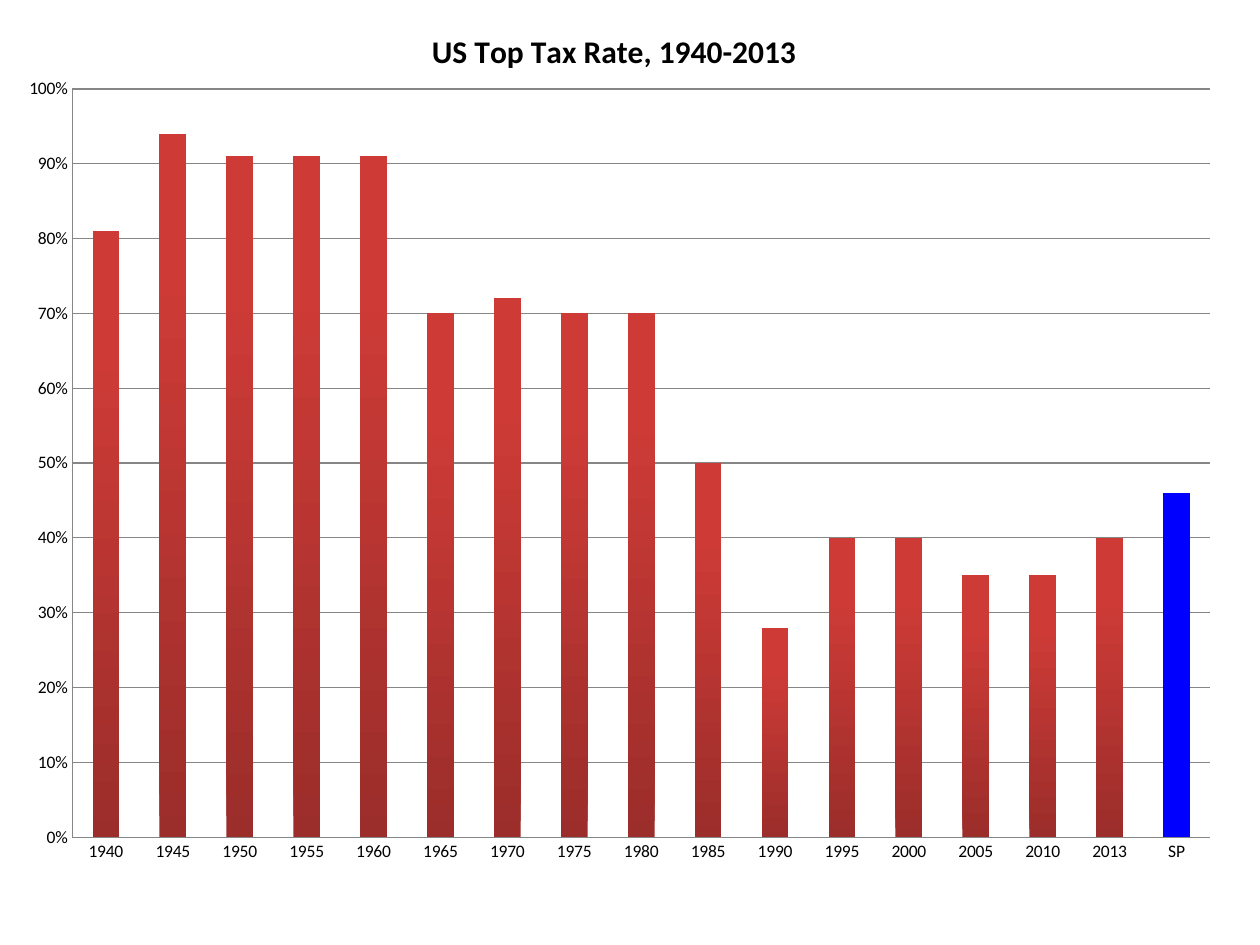
from lxml.etree import SubElement
from pptx import Presentation
from pptx.chart.data import CategoryChartData
from pptx.dml.color import RGBColor
from pptx.enum.chart import XL_CHART_TYPE, XL_TICK_MARK
from pptx.oxml.ns import qn
from pptx.util import Inches, Pt

COLORS = {
    "text": "000000",
    "line": "868686",
    "bar_base": "9B2D2A",
    "bar_top": "CE3B37",
    "highlight": "0000FF",
}
TAX_RATES = {
    "1940": 0.81, "1945": 0.94, "1950": 0.91, "1955": 0.91, "1960": 0.91,
    "1965": 0.7, "1970": 0.72, "1975": 0.7, "1980": 0.7, "1985": 0.5,
    "1990": 0.28, "1995": 0.4, "2000": 0.4, "2005": 0.35, "2010": 0.35,
    "2013": 0.4, "SP": 0.46,
}


def color(name):
    return RGBColor.from_string(COLORS[name])


class SlideBuilder:
    """Holds the style and the current slide; lengths are shares of its size."""

    font_name = "Calibri"

    def __init__(self, presentation):
        self.width = presentation.slide_width
        self.height = presentation.slide_height
        self.slide = presentation.slides.add_slide(presentation.slide_layouts[6])

    def style_font(self, font, size, bold=False):
        font.name = self.font_name
        font.size = Pt(size)
        font.bold = bold
        font.color.rgb = color("text")

    def add_column_chart(self, rates, left, top, width, height):
        data = CategoryChartData(number_format="0%")
        data.categories = list(rates)
        data.add_series("Series 1", list(rates.values()))
        frame = self.slide.shapes.add_chart(
            XL_CHART_TYPE.COLUMN_CLUSTERED,
            int(left * self.width), int(top * self.height),
            int(width * self.width), int(height * self.height), data)
        chart = frame.chart
        chart.has_legend = False
        self.style_font(chart.font, 10)
        return chart

    def set_title(self, chart, text):
        chart.has_title = True
        paragraph = chart.chart_title.text_frame.paragraphs[0]
        paragraph.text = text
        self.style_font(paragraph.font, 18, bold=True)
        chart.chart_title.include_in_layout = False

    def style_axes(self, chart):
        for axis in (chart.category_axis, chart.value_axis):
            axis.major_tick_mark = axis.minor_tick_mark = XL_TICK_MARK.NONE
            self.style_line(axis.format.line)
        values = chart.value_axis
        values.minimum_scale, values.maximum_scale, values.major_unit = 0, 1, 0.1
        values.tick_labels.number_format = "0%"
        values.tick_labels.number_format_is_linked = False
        values.has_major_gridlines = True
        self.style_line(values.major_gridlines.format.line)

    def style_line(self, line):
        line.color.rgb = color("line")
        line.width = Pt(0.75)

    def style_bars(self, chart, highlighted):
        plot = chart.plots[0]
        plot.gap_width = 150
        plot.vary_by_categories = False
        series = plot.series[0]
        series.invert_if_negative = False
        fill = series.format.fill
        fill.gradient()
        fill.gradient_angle = 90
        for stop, name, position in zip(
                fill.gradient_stops, ("bar_base", "bar_top"), (0, 0.8)):
            stop.color.rgb = color(name)
            stop.position = position
        point_fill = series.points[highlighted].format.fill
        point_fill.solid()
        point_fill.fore_color.rgb = color("highlight")

    def place_plot(self, chart, x, y, w, h):
        plot_area = chart.plots[0]._element.getparent()
        for old_layout in plot_area.findall(qn("c:layout")):
            plot_area.remove(old_layout)
        layout = SubElement(plot_area, qn("c:layout"))
        plot_area.insert(0, layout)
        manual = SubElement(layout, qn("c:manualLayout"))
        settings = {"layoutTarget": "inner", "xMode": "edge", "yMode": "edge",
                    "x": x, "y": y, "w": w, "h": h}
        for tag, value in settings.items():
            SubElement(manual, qn(f"c:{tag}")).set("val", str(value))


def main():
    presentation = Presentation()
    presentation.slide_width, presentation.slide_height = Inches(10), Inches(7.5)
    builder = SlideBuilder(presentation)

    # Chart and its title
    chart = builder.add_column_chart(TAX_RATES, 0, 0, 0.975, 0.923)
    builder.set_title(chart, "US Top Tax Rate, 1940-2013")

    # Axes, bars and plot position
    builder.style_axes(chart)
    builder.style_bars(chart, highlighted=len(TAX_RATES) - 1)
    builder.place_plot(chart, 0.059, 0.102, 0.926, 0.858)

    presentation.save("out.pptx")


if __name__ == "__main__":
    main()
